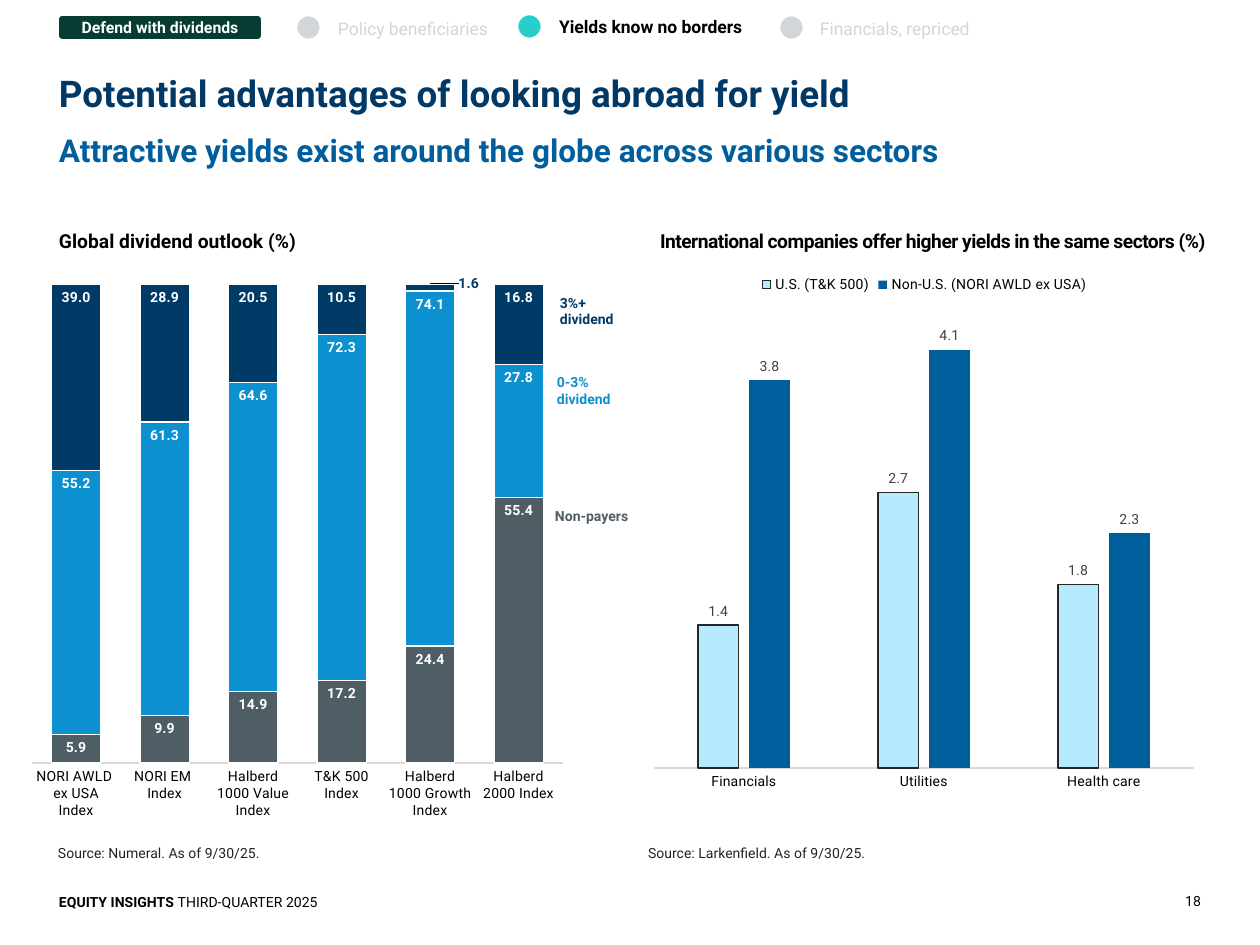
from lxml.etree import SubElement
from pptx import Presentation
from pptx.chart.data import CategoryChartData
from pptx.dml.color import RGBColor
from pptx.enum.chart import XL_CHART_TYPE, XL_LABEL_POSITION, XL_LEGEND_POSITION, XL_TICK_MARK
from pptx.enum.shapes import MSO_SHAPE
from pptx.enum.text import MSO_ANCHOR, MSO_AUTO_SIZE, PP_ALIGN
from pptx.oxml import parse_xml
from pptx.oxml.ns import nsdecls, qn
from pptx.util import Inches, Pt

PIXELS_PER_INCH = 126
FONT = "Roboto"
BLACK, WHITE, SOURCE_GRAY = "000000", "FFFFFF", "222222"
NAVY, TITLE_NAVY, BLUE, SKY = "003A66", "003866", "005E9D", "0D90CF"
SLATE, PALE_GRAY, PALE_BLUE = "4F5D65", "D1D6DA", "B6EAFF"
TEAL, DARK_GREEN = "29CECC", "063C32"


def px(value):
    return round(value * Inches(1) / PIXELS_PER_INCH)


def color(hex_value):
    return RGBColor.from_string(hex_value)


def set_attributes(target, values):
    for name, value in values.items():
        setattr(target, name, value)


def format_font(font, size, hex_value, bold=False):
    set_attributes(font, {"name": FONT, "size": Pt(size), "bold": bold})
    font.color.rgb = color(hex_value)


def format_line(line, hex_value, width):
    line.color.rgb = color(hex_value)
    line.width = Pt(width)


def place(shape, left, top, width, height):
    set_attributes(shape, {"left": px(left), "top": px(top),
                           "width": px(width), "height": px(height)})


def fill_text(shape, runs, size, hex_value, inset=(0, 0),
              anchor=MSO_ANCHOR.TOP, fit=MSO_AUTO_SIZE.NONE, spacing=0, **para_format):
    """Write one paragraph; runs is a list of (text, bold) pairs."""
    frame = shape.text_frame
    horizontal, vertical = (px(value) for value in inset)
    set_attributes(frame, {
        "word_wrap": True, "auto_size": fit, "vertical_anchor": anchor,
        "margin_left": horizontal, "margin_right": horizontal,
        "margin_top": vertical, "margin_bottom": vertical})
    para = frame.paragraphs[0]
    set_attributes(para, {"alignment": PP_ALIGN.LEFT, **para_format})
    for text, bold in runs:
        span = para.add_run()
        span.text = text
        format_font(span.font, size, hex_value, bold)
        if spacing:
            span._r.get_or_add_rPr().set("spc", str(spacing))
    return para


def add_text(page, bounds, runs, size, hex_value, **options):
    box = page.shapes.add_textbox(*map(px, bounds))
    options.setdefault("fit", MSO_AUTO_SIZE.SHAPE_TO_FIT_TEXT)
    fill_text(box, runs, size, hex_value, **options)


def add_shape(page, kind, bounds, fill, line_width):
    shape = page.shapes.add_shape(kind, *map(px, bounds))
    shape.shadow.inherit = False
    shape.fill.solid()
    shape.fill.fore_color.rgb = color(fill)
    format_line(shape.line, WHITE, line_width)
    return shape


def layout_xml(mode_tags, **numbers):
    modes = "".join(f'<c:{tag} val="{value}"/>' for tag, value in mode_tags)
    sizes = "".join(f'<c:{tag} val="{value:.4f}"/>' for tag, value in numbers.items())
    return parse_xml(f'<c:layout {nsdecls("c")}><c:manualLayout>{modes}{sizes}'
                     '</c:manualLayout></c:layout>')


def set_plot_area(chart, bounds, plot_bounds):
    """Fix the inner plot rectangle, given in slide pixels."""
    left, top, width, height = bounds
    plot_left, plot_top, plot_width, plot_height = plot_bounds
    area = chart._chartSpace.chart.plotArea
    for old in area.findall(qn("c:layout")):
        area.remove(old)
    area.insert(0, layout_xml(
        [("layoutTarget", "inner"), ("xMode", "edge"), ("yMode", "edge")],
        x=(plot_left - left) / width, y=(plot_top - top) / height,
        w=plot_width / width, h=plot_height / height))


def add_column_chart(page, kind, bounds, plot_bounds, categories, series_formats,
                     maximum, gap, overlap, label_position, label_bold):
    data = CategoryChartData(number_format="#,##0.0")
    data.categories = categories
    for name, values, *_ in series_formats:
        data.add_series(name, values)
    chart = page.shapes.add_chart(kind, *map(px, bounds), data).chart
    set_attributes(chart, {"has_title": False, "has_legend": False})
    format_font(chart.font, 8, BLACK)
    set_plot_area(chart, bounds, plot_bounds)

    set_attributes(chart.value_axis, {
        "visible": False, "has_major_gridlines": False,
        "minimum_scale": 0, "maximum_scale": maximum})
    axis = chart.category_axis
    axis.major_tick_mark = XL_TICK_MARK.NONE
    format_font(axis.tick_labels.font, 8, BLACK)
    format_line(axis.format.line, "D9D9D9", 0.75)

    plot = chart.plots[0]
    set_attributes(plot, {"gap_width": gap, "overlap": overlap, "vary_by_categories": False})
    for series, (_, _, fill, outline, label_color) in zip(plot.series, series_formats):
        series.invert_if_negative = False
        series.format.fill.solid()
        series.format.fill.fore_color.rgb = color(fill)
        if outline:
            format_line(series.format.line, outline, 0.75)
        labels = series.data_labels
        set_attributes(labels, {"show_value": True, "position": label_position,
                                "number_format": "#,##0.0", "number_format_is_linked": False})
        format_font(labels.font, 8, label_color, label_bold)
    return chart


def move_label(series, point, hex_value, shift_x, shift_y):
    """Shift one data label by fractions of the chart size."""
    label = series.points[point].data_label
    format_font(label.font, 8, hex_value, True)
    label.position = XL_LABEL_POSITION.INSIDE_END
    element = series.data_labels._element.find(qn("c:dLbl"))
    number_format = parse_xml(
        f'<c:numFmt {nsdecls("c")} formatCode="#,##0.0" sourceLinked="0"/>')
    element.insert(1, layout_xml([], x=shift_x, y=shift_y))
    element.insert(2, number_format)


def add_navigation(page):
    tag = add_shape(page, MSO_SHAPE.ROUNDED_RECTANGLE, (58, 15, 204, 25), DARK_GREEN, 1)
    tag.adjustments[0] = 0.18
    fill_text(tag, [("Defend with dividends", True)], 9, WHITE, inset=(13, 0),
              anchor=MSO_ANCHOR.MIDDLE, alignment=PP_ALIGN.CENTER)
    for dot_left, text_left, width, text, active in (
            (296, 338, 164, "Policy beneficiaries", False),
            (517, 559, 219, "Yields know no borders", True),
            (779, 820, 195, "Financials, repriced", False)):
        add_shape(page, MSO_SHAPE.OVAL, (dot_left, 14 if active else 15, 25, 25),
                  TEAL if active else PALE_GRAY, 1.5)
        add_text(page, (text_left, 16 if active else 18, width, 21), [(text, active)], 10,
                 BLACK if active else PALE_GRAY)


def add_headings(page):
    title, body = page.placeholders
    place(title, 59, 3, 1142, 113)
    fill_text(title, [("Potential advantages of looking abroad for yield", True)], 21,
              TITLE_NAVY, anchor=MSO_ANCHOR.BOTTOM, line_spacing=0.95)
    place(body, 59, 131, 1142, 78)
    para = fill_text(
        body, [("Attractive yields exist around the globe across various sectors", True)],
        18, BLUE, space_before=Pt(4.5), space_after=Pt(13.5))
    properties = para._p.get_or_add_pPr()
    for name in ("marL", "indent"):
        properties.set(name, "0")
    SubElement(properties, qn("a:buNone"))


def add_outlook(page):
    add_text(page, (59, 229, 571, 24), [("Global dividend outlook (%)", True)], 11, BLACK)
    chart = add_column_chart(
        page, XL_CHART_TYPE.COLUMN_STACKED, (21, 175, 553, 658), (32, 284, 531, 479),
        ["NORI AWLD \nex USA Index", "NORI EM \nIndex", "Halberd 1000 Value Index",
         "T&K 500\nIndex", "Halberd 1000 Growth Index", "Halberd 2000 Index"],
        [("Series 1", (5.9, 9.9, 14.9, 17.2, 24.4, 55.4), SLATE, WHITE, WHITE),
         ("Series 2", (55.2, 61.3, 64.6, 72.3, 74.1, 27.8), SKY, WHITE, WHITE),
         ("Series 3", (39.0, 28.9, 20.5, 10.5, 1.6, 16.8), NAVY, WHITE, WHITE)],
        100, 79, 100, XL_LABEL_POSITION.INSIDE_END, True)
    move_label(chart.plots[0].series[2], 4, NAVY, 0.07, -0.02)
    for left, top, height, text, hex_value in (
            (542, 501, 30, "Non-payers", SLATE),
            (544, 368, 47, "0-3% dividend", SKY),
            (547, 288, 47, "3%+ dividend", NAVY)):
        add_text(page, (left, top, 101, height), [(text, True)], 8, hex_value, inset=(13, 6))


def add_sector_yields(page):
    add_text(page, (660, 229, 600, 24),
             [("International companies offer higher yields in the same sectors (%)", True)],
             11, BLACK, spacing=-30)
    chart = add_column_chart(
        page, XL_CHART_TYPE.COLUMN_CLUSTERED, (643, 262, 563, 539), (654, 309, 540, 459),
        ["Financials", "Utilities", "Health care"],
        [("U.S. (T&K 500)", (1.4, 2.7, 1.8), PALE_BLUE, "262626", "404040"),
         ("Non-U.S. (NORI AWLD ex USA)", (3.8, 4.1, 2.3), BLUE, None, "404040")],
        4.5, 219, -27, XL_LABEL_POSITION.OUTSIDE_END, False)
    chart.has_legend = True
    set_attributes(chart.legend, {"position": XL_LEGEND_POSITION.TOP,
                                  "include_in_layout": False})
    format_font(chart.legend.font, 8, BLACK)


def add_footer(page):
    for left, provider in ((45, "Numeral"), (635, "Larkenfield")):
        add_text(page, (left, 839, 546, 30), [(f"Source: {provider}. As of 9/30/25.", False)],
                 8, SOURCE_GRAY, inset=(13, 6))
    add_text(page, (59, 893, 775, 17),
             [("EQUITY INSIGHTS ", True), ("THIRD-QUARTER 2025", False)], 8, BLACK)
    add_text(page, (1128, 891, 73, 18), [("18", False)], 8, BLACK, fit=MSO_AUTO_SIZE.NONE,
             anchor=MSO_ANCHOR.BOTTOM, alignment=PP_ALIGN.RIGHT, line_spacing=1.1,
             space_before=Pt(9))


def main():
    deck = Presentation()
    set_attributes(deck, {"slide_width": Inches(10), "slide_height": Inches(7.5)})
    page = deck.slides.add_slide(deck.slide_layouts[1])
    add_headings(page)
    add_navigation(page)
    add_outlook(page)
    add_sector_yields(page)
    add_footer(page)
    deck.save("out.pptx")


if __name__ == "__main__":
    main()
